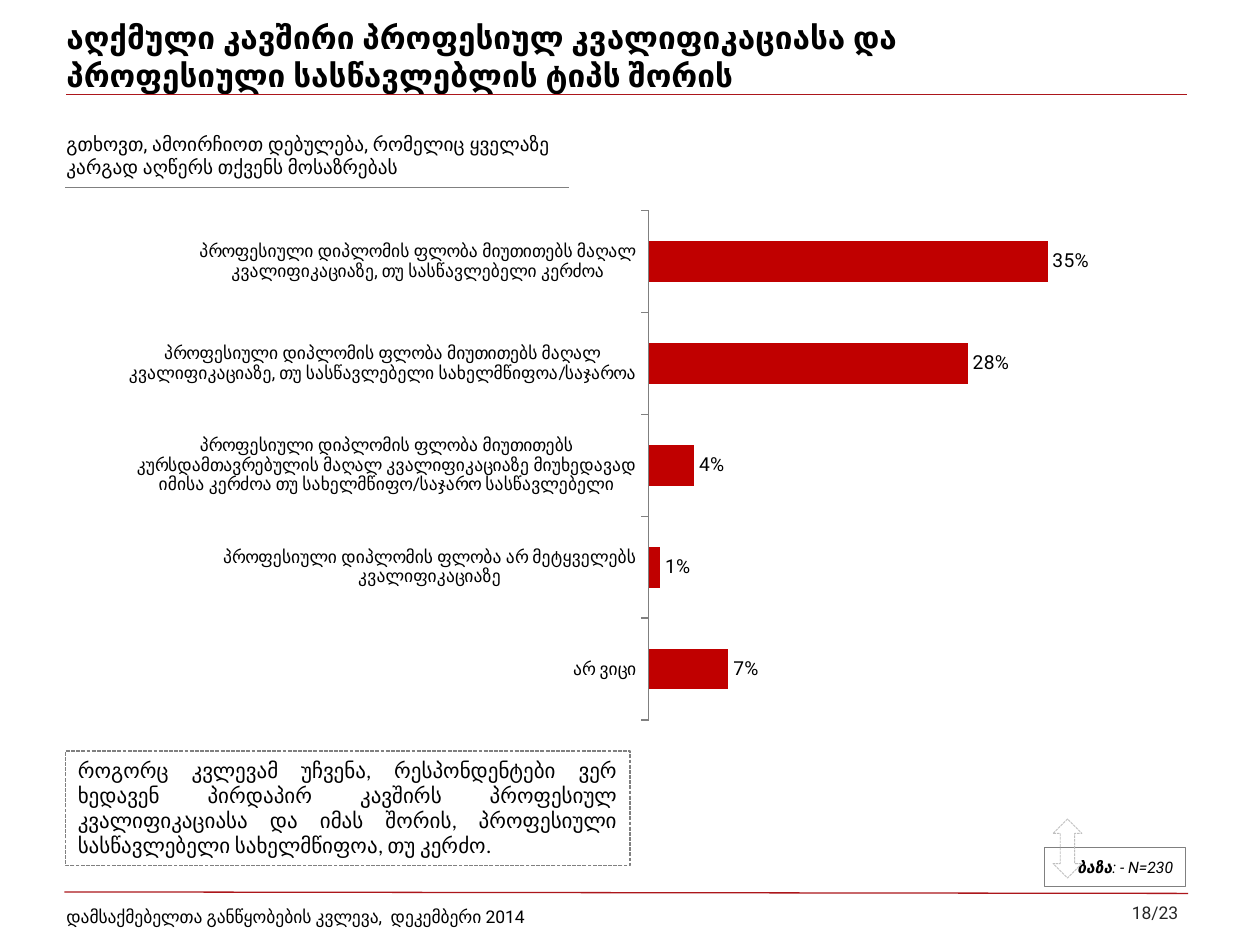
import pptx
import pptx.chart.data
import pptx.dml.color
import pptx.enum.chart
import pptx.enum.dml
import pptx.enum.shapes
import pptx.enum.text
import pptx.oxml
import pptx.oxml.ns
import pptx.util
from pptx.util import Cm

COLORS = {
    "black": "000000", "page_number": "262626", "rule": "AC161B",
    "bar": "C00000", "gray": "808080", "arrow": "BFBFBF",
}
ALIGN = pptx.enum.text.PP_ALIGN
ANCHOR = pptx.enum.text.MSO_ANCHOR
SHAPE = pptx.enum.shapes.MSO_SHAPE
DASH = pptx.enum.dml.MSO_LINE.SQUARE_DOT

RESULTS = {
    "პროფესიული დიპლომის ფლობა მიუთითებს მაღალ კვალიფიკაციაზე, "
    "თუ სასწავლებელი კერძოა": 0.35,
    "პროფესიული დიპლომის ფლობა მიუთითებს მაღალ კვალიფიკაციაზე, "
    "თუ სასწავლებელი სახელმწიფოა/საჯაროა": 0.28,
    "პროფესიული დიპლომის ფლობა მიუთითებს კურსდამთავრებულის მაღალ "
    "კვალიფიკაციაზე მიუხედავად იმისა კერძოა თუ სახელმწიფო/საჯარო სასწავლებელი": 0.04,
    "პროფესიული დიპლომის ფლობა არ მეტყველებს კვალიფიკაციაზე": 0.01,
    "არ ვიცი": 0.07,
}


def rgb(name):
    return pptx.dml.color.RGBColor.from_string(COLORS[name])


def set_font(font, size, name="Roboto", color="black", **styles):
    values = {"size": pptx.util.Pt(size), "name": name, **styles}
    for key, value in values.items():
        setattr(font, key, value)
    font.color.rgb = rgb(color)


def set_line(line, color, width, dash=None):
    line.color.rgb = rgb(color)
    line.width = pptx.util.Pt(width)
    if dash is not None:
        line.dash_style = dash


def write(shape, spans, size, align=ALIGN.LEFT, anchor=ANCHOR.MIDDLE, **styles):
    """Fill a shape with one paragraph of (text, extra font styles) spans."""
    frame = shape.text_frame
    frame.word_wrap = True
    frame.vertical_anchor = anchor
    para = frame.paragraphs[0]
    para.alignment = align
    for index, (text, extra) in enumerate(spans):
        for number, piece in enumerate(text.split("\n")):
            if number:
                para.add_line_break()
            span = para.add_run()
            span.text = piece
            set_font(span.font, size, **{**styles, **extra})


def add_text(page, box, text, size, **options):
    shape = page.shapes.add_textbox(*map(Cm, box))
    write(shape, [(text, {})], size, **options)


def add_outline(page, kind, box, color, width, dash=None):
    shape = page.shapes.add_shape(kind, *map(Cm, box))
    shape.shadow.inherit = False
    shape.fill.background()
    set_line(shape.line, color, width, dash)
    return shape


def add_rule(page, left, top, right, color, drop=0):
    rule = page.shapes.add_connector(
        pptx.enum.shapes.MSO_CONNECTOR.STRAIGHT,
        Cm(left), Cm(top), Cm(right), Cm(top + drop))
    set_line(rule.line, color, 0.75)
    rule._element.spPr.append(pptx.oxml.parse_xml(
        f"<a:effectLst {pptx.oxml.ns.nsdecls('a')}/>"))


def add_header(page, left, top, width, height):
    add_text(page, (left, top, width, height),
             "აღქმული კავშირი პროფესიულ კვალიფიკაციასა და \n"
             "პროფესიული სასწავლებლის ტიპს შორის", 18, bold=True)
    add_rule(page, left + 0.25, top + 1.16, left + 22.84, "rule")


def add_question(page, left, top, width, height):
    add_text(page, (left, top, width, height),
             "გთხოვთ, ამოირჩიოთ დებულება, რომელიც ყველაზე კარგად აღწერს "
             "თქვენს მოსაზრებას", 11, anchor=ANCHOR.TOP)
    add_rule(page, left + 0.23, top + 1.24, left + 10.39, "gray")


def set_plot_layout(chart, x, y, w, h):
    """Fix the inner plot area, in fractions of the chart."""
    plot_area = chart._chartSpace.chart.plotArea
    for old in plot_area.findall(pptx.oxml.ns.qn("c:layout")):
        plot_area.remove(old)
    sizes = "".join(f'<c:{key} val="{value}"/>'
                    for key, value in zip("xywh", (x, y, w, h)))
    plot_area.insert(0, pptx.oxml.parse_xml(
        f"<c:layout {pptx.oxml.ns.nsdecls('c')}><c:manualLayout>"
        '<c:layoutTarget val="inner"/><c:xMode val="edge"/><c:yMode val="edge"/>'
        f"{sizes}</c:manualLayout></c:layout>"))


def add_answer_chart(page, *box):
    data = pptx.chart.data.CategoryChartData(number_format="0%")
    data.categories = list(RESULTS)
    data.add_series("Series 1", list(RESULTS.values()))
    chart = page.shapes.add_chart(
        pptx.enum.chart.XL_CHART_TYPE.BAR_CLUSTERED, *map(Cm, box), data).chart
    chart.has_legend = chart.has_title = False
    set_font(chart.font, 18, "Calibri")

    categories = chart.category_axis
    categories.reverse_order = True
    categories.has_major_gridlines = False
    categories.major_tick_mark = pptx.enum.chart.XL_TICK_MARK.OUTSIDE
    set_font(categories.tick_labels.font, 10)
    set_line(categories.format.line, "gray", 0.75)

    values = chart.value_axis
    values.visible = values.has_major_gridlines = False
    values.minimum_scale, values.maximum_scale = 0, 0.4

    plot = chart.plots[0]
    plot.gap_width = 150
    plot.vary_by_categories = False
    bars = plot.series[0].format.fill
    bars.solid()
    bars.fore_color.rgb = rgb("bar")
    plot.has_data_labels = True
    labels = plot.data_labels
    label_format = {
        "show_value": True, "number_format": "0%",
        "number_format_is_linked": False,
        "position": pptx.enum.chart.XL_LABEL_POSITION.OUTSIDE_END,
    }
    for key, value in label_format.items():
        setattr(labels, key, value)
    set_font(labels.font, 11)
    set_plot_layout(chart, 0.52, 0.01, 0.45, 0.99)


def add_finding(page, *box):
    shape = add_outline(page, SHAPE.RECTANGLE, box, "gray", 0.75, DASH)
    text = ("როგორც კვლევამ უჩვენა, რესპონდენტები ვერ ხედავენ პირდაპირ კავშირს "
            "პროფესიულ კვალიფიკაციასა და იმას შორის, პროფესიული სასწავლებელი "
            "სახელმწიფოა, თუ კერძო.")
    write(shape, [(text, {})], 12, ALIGN.JUSTIFY, ANCHOR.TOP, name="Calibri")


def add_sample_base(page, left, top, width, height):
    shape = add_outline(page, SHAPE.RECTANGLE, (left, top, width, height), "gray", 0.5)
    write(shape, [("ბაზა", {"bold": True}), (": - N=230", {"bold": False})],
          9, ALIGN.RIGHT, italic=True)
    add_outline(page, SHAPE.UP_DOWN_ARROW, (left + 0.17, top - 0.58, 0.58, 1.19),
                "arrow", 0.5, DASH)


def add_footer(page, left, top, width, height):
    add_rule(page, left + 0.21, top + 0.02, left + 22.86, "rule", drop=0.03)
    add_text(page, (left, top, 14.86, height),
             "დამსაქმებელთა განწყობების კვლევა,  დეკემბერი 2014", 10)
    add_text(page, (left + width - 3.89, top - 0.08, 3.89, height), "18/23", 10,
             align=ALIGN.RIGHT, color="page_number")


def main():
    deck = pptx.Presentation()
    deck.slide_width, deck.slide_height = Cm(25.4), Cm(19.05)
    page = deck.slides.add_slide(deck.slide_layouts[6])
    add_header(page, 1.09, 0.74, 20.12, 0.79)
    add_question(page, 1.09, 2.54, 10.57, 1.19)
    add_answer_chart(page, 2.46, 4.14, 20.42, 10.39)
    add_finding(page, 1.32, 15.14, 11.38, 2.31)
    add_sample_base(page, 21.06, 17.09, 2.84, 0.79)
    add_footer(page, 1.09, 17.96, 22.91, 1.02)
    deck.save("out.pptx")


if __name__ == "__main__":
    main()
